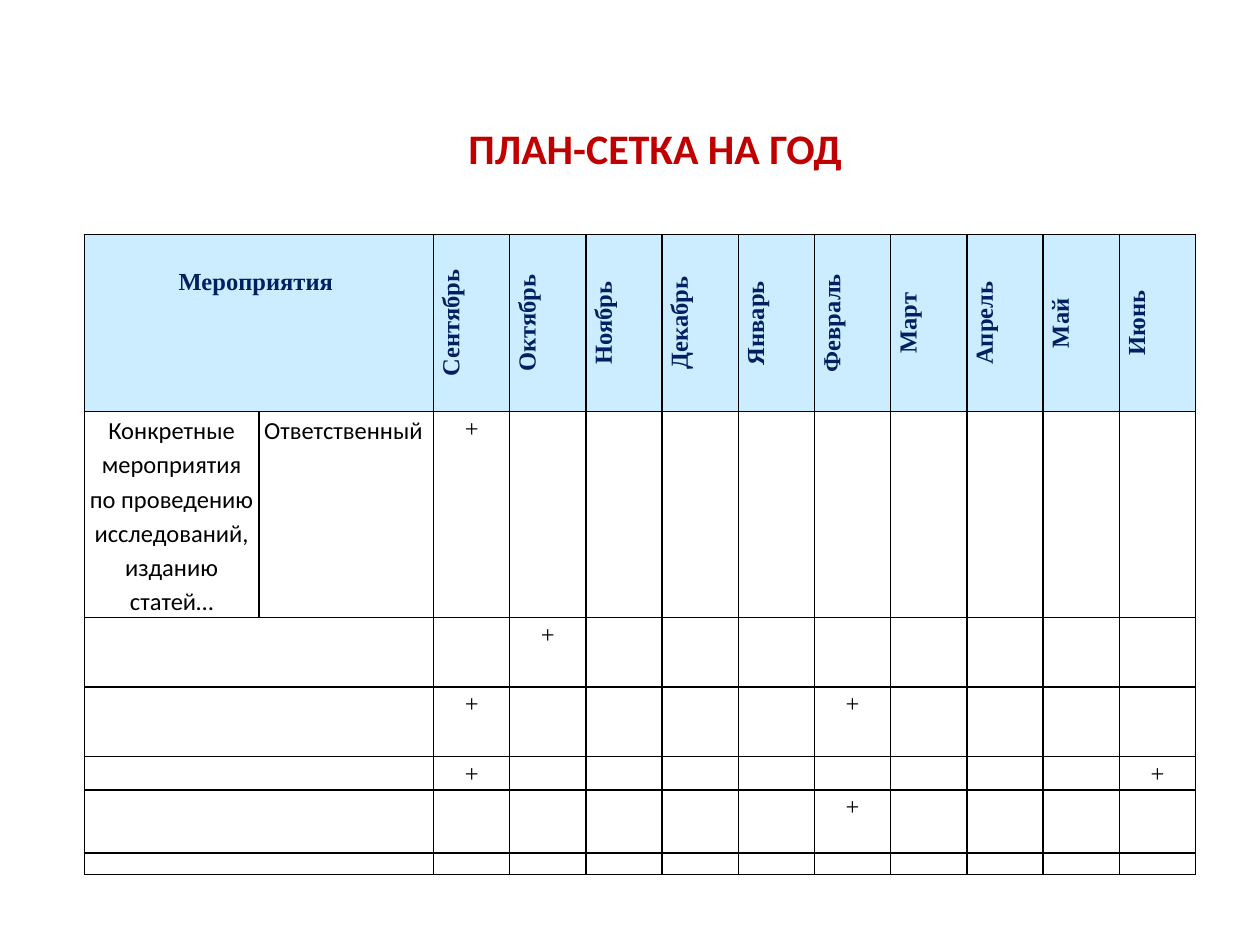
from dataclasses import dataclass

from lxml import etree
from pptx import Presentation
from pptx.dml.color import RGBColor
from pptx.enum.text import MSO_ANCHOR, MSO_AUTO_SIZE, PP_ALIGN
from pptx.oxml.ns import qn
from pptx.util import Cm, Pt

CENTER = PP_ALIGN.CENTER
MIDDLE = MSO_ANCHOR.MIDDLE
NO_AUTOFIT = MSO_AUTO_SIZE.NONE
TITLE_ONLY_LAYOUT = 5


@dataclass(frozen=True)
class Theme:
    title: str = "C00000"
    heading: str = "002060"
    body: str = "000000"
    header_fill: str = "CCECFF"
    border: str = "000000"
    sans: str = "Calibri"
    serif: str = "Times New Roman"
    title_size: int = 24
    table_size: int = 14
    empty_size: int = 8
    border_width: int = 1
    line_spacing: float = 1.15


THEME = Theme()
MONTHS = ["Сентябрь", "Октябрь", "Ноябрь", "Декабрь", "Январь",
          "Февраль", "Март", "Апрель", "Май", "Июнь"]
# Months marked in each row below the header
MARKS = [["Сентябрь"], ["Октябрь"], ["Сентябрь", "Февраль"],
         ["Сентябрь", "Июнь"], ["Февраль"], []]
ROW_HEIGHTS = [3.57, 4.08, 1.4, 1.4, 0.68, 1.27, 0.43]
EVENT_COLUMNS = 2
EVENT_WIDTH = 3.52


def write(frame, text, *, font=THEME.serif, size=THEME.table_size,
          color=THEME.body, bold=False, spacing=THEME.line_spacing):
    para = frame.paragraphs[0]
    para.alignment = CENTER
    para.line_spacing = spacing
    span = para.add_run()
    span.text = text
    span.font.name = font
    span.font.size = Pt(size)
    span.font.bold = bold
    span.font.color.rgb = RGBColor.from_string(color)


def add_borders(cell):
    properties = cell._tc.get_or_add_tcPr()
    for side in ("a:lnL", "a:lnR", "a:lnT", "a:lnB"):
        line = etree.SubElement(properties, qn(side),
                                w=str(Pt(THEME.border_width)))
        fill = etree.SubElement(line, qn("a:solidFill"))
        etree.SubElement(fill, qn("a:srgbClr"), val=THEME.border)


def format_cell(cell, is_header):
    add_borders(cell)
    cell.margin_left = cell.margin_right = Cm(0.1)
    cell.margin_top = cell.margin_bottom = 0
    if is_header:
        cell.fill.solid()
        cell.fill.fore_color.rgb = RGBColor.from_string(THEME.header_fill)
    else:
        cell.fill.background()


def shrink_empty(cell):
    """Keep the default type size of an empty cell from stretching its row."""
    para = cell.text_frame.paragraphs[0]
    if not para.runs:
        etree.SubElement(para._p, qn("a:endParaRPr"),
                         sz=str(THEME.empty_size * 100))


def add_title(page, left, top, width, height):
    title = page.shapes.title
    title.left, title.top = Cm(left), Cm(top)
    title.width, title.height = Cm(width), Cm(height)
    frame = title.text_frame
    frame.word_wrap = True
    frame.auto_size = NO_AUTOFIT
    frame.vertical_anchor = MIDDLE
    write(frame, "ПЛАН-СЕТКА НА ГОД", font=THEME.sans,
          size=THEME.title_size, color=THEME.title, bold=True, spacing=1.0)


def fill_header(table):
    heading = {"color": THEME.heading, "bold": True}
    events = table.cell(0, 0)
    events.margin_top = Cm(0.6)
    write(events.text_frame, "Мероприятия ", **heading)
    for column, month in enumerate(MONTHS, EVENT_COLUMNS):
        cell = table.cell(0, column)
        cell._tc.get_or_add_tcPr().set("vert", "vert270")
        write(cell.text_frame, month, **heading)


def fill_plan(table):
    labels = ["Конкретные мероприятия по проведению исследований, "
              "изданию статей…", "Ответственный "]
    for column, label in enumerate(labels):
        write(table.cell(1, column).text_frame, label, font=THEME.sans)
    for row, months in enumerate(MARKS, 1):
        for month in months:
            column = EVENT_COLUMNS + MONTHS.index(month)
            write(table.cell(row, column).text_frame, "+")


def add_year_plan(page, left, top, width):
    table = page.shapes.add_table(
        len(ROW_HEIGHTS), EVENT_COLUMNS + len(MONTHS), Cm(left), Cm(top),
        Cm(width), Cm(sum(ROW_HEIGHTS))).table
    table.first_row = table.horz_banding = False
    month_width = (width - EVENT_COLUMNS * EVENT_WIDTH) / len(MONTHS)
    for index, column in enumerate(table.columns):
        column.width = Cm(EVENT_WIDTH if index < EVENT_COLUMNS
                          else month_width)
    for index, (row, height) in enumerate(zip(table.rows, ROW_HEIGHTS)):
        row.height = Cm(height)
        for cell in row.cells:
            format_cell(cell, is_header=index == 0)
        if index != 1:
            table.cell(index, 0).merge(table.cell(index, EVENT_COLUMNS - 1))
    fill_header(table)
    fill_plan(table)
    for cell in table.iter_cells():
        shrink_empty(cell)


def main():
    deck = Presentation()
    deck.slide_width, deck.slide_height = Cm(25.4), Cm(19.05)
    page = deck.slides.add_slide(deck.slide_layouts[TITLE_ONLY_LAYOUT])
    add_title(page, left=5.31, top=2.34, width=15.8, height=1.27)
    add_year_plan(page, left=1.7, top=4.73, width=22.4)
    deck.save("out.pptx")


if __name__ == "__main__":
    main()
